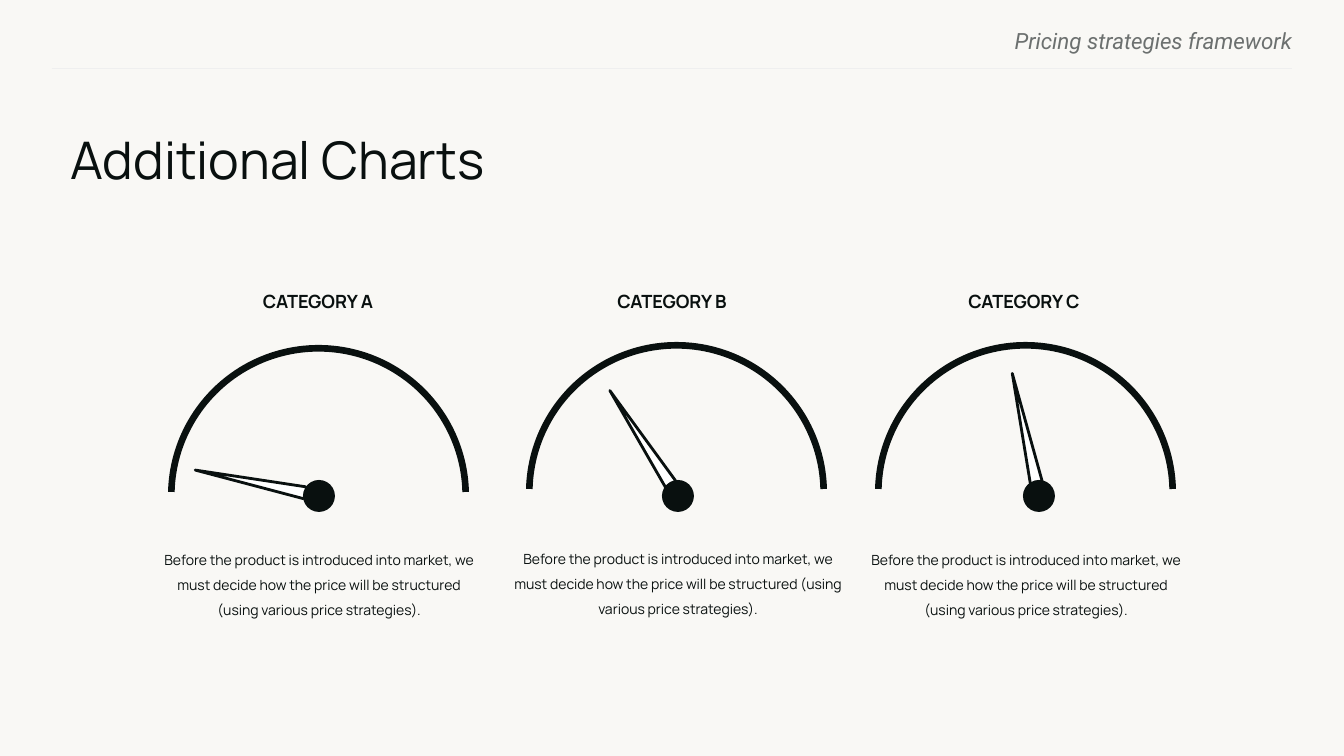
import math

import pptx
import pptx.dml.color
import pptx.enum.shapes
import pptx.enum.text
import pptx.oxml.ns
import pptx.util
from lxml import etree

PX_PER_INCH = 100.8
THEME = {
    "paper": "F9F8F5", "ink": "09100F", "grey": "6C706F", "rule": "EFEFEF", "white": "FFFFFF",
    "font": "Manrope", "header_font": "Roboto",
    "title": 37, "header": 16, "category": 13, "caption": 10,
}
ALIGN = pptx.enum.text.PP_ALIGN
SHAPE = pptx.enum.shapes.MSO_SHAPE
CAPTION = ("Before the product is introduced into market, we must decide how the price "
           "will be structured (using various price strategies).")
# name, arc left and top, hub centre, needle angle, category left, caption left, top and width
GAUGES = [
    ("CATEGORY A", 168, 345, 319, 281.7, 187, 146, 538, 346),
    ("CATEGORY B", 526, 342, 678, 327, 541, 504, 537, 348),
    ("CATEGORY C", 875, 342, 1039, 347.6, 893, 853, 538, 346),
]
ARC_SIZE = 301
HUB_SIZE, HUB_Y = 32, 496
NEEDLE_WIDTH, NEEDLE_LENGTH, NEEDLE_REACH = 12, 118, 67
NEEDLE_OUTLINE = [(6, 0), (12, 111), (10, 116), (6, 118), (2, 116), (0, 111)]


def px(*lengths):
    """Turn whole pixels into EMU."""
    return [pptx.util.Inches(length / PX_PER_INCH) for length in lengths]


def write(box, text, size, align, spacing=None, margins=(10, 5), font="font",
          color="ink", bold=False, italic=False):
    """Fill a text shape with one styled paragraph; margins are side and top."""
    frame = box.text_frame
    frame.word_wrap = True
    frame.margin_left, frame.margin_top = px(*margins)
    frame.margin_right, frame.margin_bottom = px(*margins)
    para = frame.paragraphs[0]
    para.alignment = align
    if spacing:
        para.line_spacing = spacing
    span = para.add_run()
    span.text = text
    span.font.name = THEME[font]
    span.font.size = pptx.util.Pt(THEME[size])
    span.font.bold = bold
    span.font.italic = italic
    span.font.color.rgb = colors[color]
    return frame


colors = {name: pptx.dml.color.RGBColor.from_string(THEME[name])
          for name in ("paper", "ink", "grey", "rule", "white")}

deck = pptx.Presentation()
deck.slide_width, deck.slide_height = px(1344, 756)
page = deck.slides.add_slide(deck.slide_layouts[5])
page.background.fill.solid()
page.background.fill.fore_color.rgb = colors["paper"]
shapes = page.shapes

# Header
header = shapes.add_textbox(*px(774, 27, 518, 24))
write(header, "Pricing strategies framework", "header", ALIGN.RIGHT, margins=(0, 0),
      font="header_font", color="grey", italic=True)
rule = shapes.add_connector(pptx.enum.shapes.MSO_CONNECTOR.STRAIGHT, *px(52, 69, 1292, 69))
rule.line.color.rgb = colors["rule"]
rule.line.width = pptx.util.Pt(0.75)
etree.SubElement(rule._element.spPr, pptx.oxml.ns.qn("a:effectLst"))

# Title
title = shapes.title
title.left, title.top, title.width, title.height = px(60, 124, 1240, 69)
title_frame = write(title, "Additional Charts", "title", ALIGN.LEFT)
title_frame.vertical_anchor = pptx.enum.text.MSO_ANCHOR.MIDDLE
title_frame.auto_size = pptx.enum.text.MSO_AUTO_SIZE.NONE

# Gauges
for (name, arc_left, arc_top, hub_x, angle,
     category_left, caption_left, caption_top, caption_width) in GAUGES:
    category = shapes.add_textbox(*px(category_left, 281, 262, 35))
    write(category, name, "category", ALIGN.CENTER, spacing=1.2, margins=(0, 5), bold=True)

    arc = shapes.add_shape(SHAPE.BLOCK_ARC, *px(arc_left, arc_top, ARC_SIZE, ARC_SIZE))
    for index, value in enumerate((108.83, 215.18, 0.02 * 1.1)):
        arc.adjustments[index] = value

    # The needle is drawn upright, then turned so that its base stays on the hub.
    turn = math.radians(angle)
    needle_left = round(hub_x + NEEDLE_REACH * math.sin(turn) - NEEDLE_WIDTH / 2)
    needle_top = round(HUB_Y - NEEDLE_REACH * math.cos(turn) - NEEDLE_LENGTH / 2)
    start, *rest = NEEDLE_OUTLINE
    builder = shapes.build_freeform(*start, scale=px(1)[0])
    builder.add_line_segments(rest, close=True)
    needle = builder.convert_to_shape(*px(needle_left, needle_top))
    needle.rotation = angle

    hub = shapes.add_shape(
        SHAPE.OVAL, *px(hub_x - HUB_SIZE // 2, HUB_Y - HUB_SIZE // 2, HUB_SIZE, HUB_SIZE))

    for part, fill in ((arc, "ink"), (needle, "white"), (hub, "ink")):
        part.shadow.inherit = False
        part.fill.solid()
        part.fill.fore_color.rgb = colors[fill]
        part.line.fill.background()
    needle.line.color.rgb = colors["ink"]
    needle.line.width = pptx.util.Pt(2)

    caption = shapes.add_textbox(*px(caption_left, caption_top, caption_width, 99))
    write(caption, CAPTION, "caption", ALIGN.CENTER, spacing=1.5)

deck.save("out.pptx")
